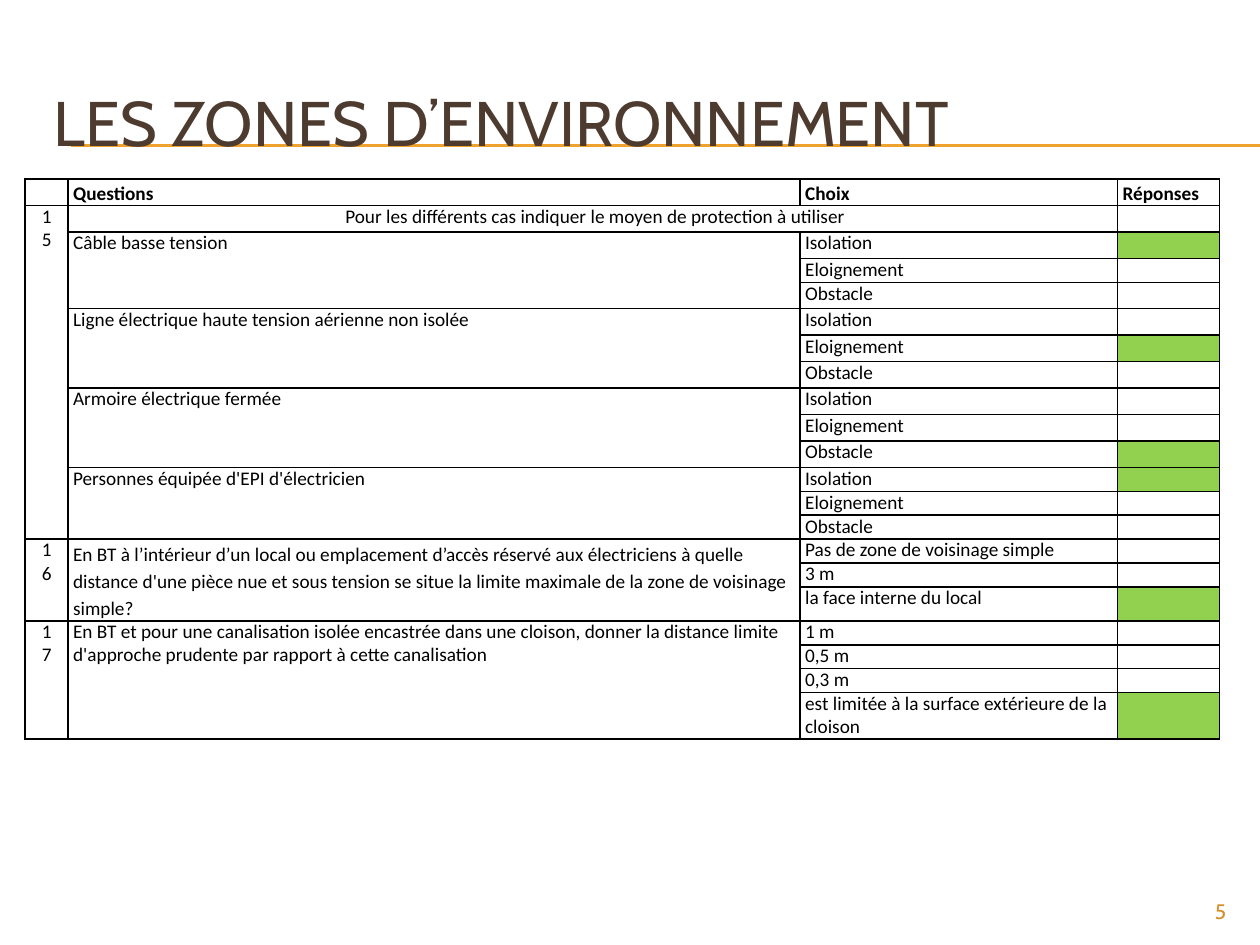
from lxml.etree import SubElement
from pptx import Presentation
from pptx.dml.color import RGBColor
from pptx.enum.text import MSO_ANCHOR, PP_ALIGN
from pptx.oxml.ns import qn
from pptx.util import Inches, Pt

BROWN = RGBColor(0x4E, 0x3B, 0x30)
AMBER = RGBColor(0xF0, 0xA2, 0x2E)
OCHRE = RGBColor(0xD4, 0x8F, 0x29)
GREEN = RGBColor(0x92, 0xD0, 0x50)
BLACK = RGBColor(0, 0, 0)
WHITE = RGBColor(0xFF, 0xFF, 0xFF)

# Content: number, instruction, then (question, choices, index of the right answer)
TITLE = "LES ZONES D’ENVIRONNEMENT"
HEADER = ["", "Questions", "Choix", "Réponses"]
MEANS = ["Isolation", "Eloignement", "Obstacle"]
BLOCKS = [
    ("15", "Pour les différents cas indiquer le moyen de protection à utiliser", [
        ("Câble basse tension", MEANS, 0),
        ("Ligne électrique haute tension aérienne non isolée", MEANS, 1),
        ("Armoire électrique fermée", MEANS, 2),
        ("Personnes équipée d'EPI d'électricien", MEANS, 0)]),
    ("16", None, [
        ("En BT à l’intérieur d’un local ou emplacement d’accès réservé aux électriciens à "
         "quelle distance d'une pièce nue et sous tension se situe la limite maximale de "
         "la zone de voisinage simple?",
         ["Pas de zone de voisinage simple", "3 m", "la face interne du local"], 2)]),
    ("17", None, [
        ("En BT et pour une canalisation isolée encastrée dans une cloison, donner la "
         "distance limite d'approche prudente par rapport à cette canalisation",
         ["1 m", "0,5 m", "0,3 m",
          "est limitée à la surface extérieure de la cloison"], 3)]),
]
COLS = [0.34, 5.81, 2.52, 0.81]
ROWS = [0.21] * 3 + [0.19] + [0.21] * 7 + [0.19] * 5 + [0.27] + [0.19] * 3 + [0.37]
EXACT = Pt(13.2)
LOOSE = 1.15


def style_run(p, size, font, color, bold=False):
    for r in p.runs:
        r.font.size, r.font.name, r.font.bold = Pt(size), font, bold
        r.font.color.rgb = color


def add_text(s, box, text, size, color, align=None, anchor=MSO_ANCHOR.TOP):
    tf = s.shapes.add_textbox(*map(Inches, box)).text_frame
    tf.word_wrap = True
    tf.vertical_anchor = anchor
    tf.text = text
    p = tf.paragraphs[0]
    p.alignment = align
    style_run(p, size, "Cabin", color)


def fill_cell(cell, text, spacing=EXACT, left=0.04, right=0, align=None, bold=False):
    cell.text_frame.text = text
    p = cell.text_frame.paragraphs[0]
    p.alignment, p.line_spacing = align, spacing
    pPr = p._p.get_or_add_pPr()
    pPr.set("marL", str(Inches(left)))
    pPr.set("marR", str(Inches(right)))
    style_run(p, 11, "Calibri", BLACK, bold)


def prepare_cell(cell):
    """Thin black borders, no insets, white fill, small empty paragraph."""
    cell.margin_left = cell.margin_right = cell.margin_top = cell.margin_bottom = 0
    tcPr = cell._tc.get_or_add_tcPr()
    for side in ("lnL", "lnR", "lnT", "lnB"):
        ln = SubElement(tcPr, qn("a:" + side), w=str(Pt(1)))
        SubElement(SubElement(ln, qn("a:solidFill")), qn("a:srgbClr"), val=str(BLACK))
    cell.fill.solid()
    cell.fill.fore_color.rgb = WHITE
    SubElement(cell.text_frame.paragraphs[0]._p, qn("a:endParaRPr"), sz="1100")


prs = Presentation()
prs.slide_width, prs.slide_height = Inches(10), Inches(7.5)
s = prs.slides.add_slide(prs.slide_layouts[6])

# Double rule under the title
for y in (1.15, 1.16):
    rule = s.shapes.add_connector(1, Inches(0.56), Inches(y), prs.slide_width, Inches(y))
    rule.line.color.rgb = AMBER
    rule.line.width = Pt(0.75)
    SubElement(rule._element.spPr, qn("a:effectLst"))

# Title and slide number
add_text(s, (0.33, 0.5, 9.5, 0.92), TITLE, 36, BROWN, anchor=MSO_ANCHOR.MIDDLE)
add_text(s, (9, 7.08, 0.83, 0.27), "5", 12, OCHRE, PP_ALIGN.RIGHT)

# Table grid
table = s.shapes.add_table(len(ROWS), len(COLS), Inches(0.2), Inches(1.42),
                           Inches(sum(COLS)), Inches(sum(ROWS))).table
table.first_row = table.horz_banding = False
for col, w in zip(table.columns, COLS):
    col.width = Inches(w)
for row, h in zip(table.rows, ROWS):
    row.height = Inches(h)
for cell in table.iter_cells():
    prepare_cell(cell)

# Header row
for c, text in enumerate(HEADER):
    if text:
        fill_cell(table.cell(0, c), text, LOOSE, bold=True)
        table.cell(0, c).text_frame.paragraphs[0].space_before = Pt(1.4)

# Question blocks
row = 1
for number, instruction, questions in BLOCKS:
    first = row
    if instruction:
        table.cell(row, 1).merge(table.cell(row, 2))
        fill_cell(table.cell(row, 1), instruction, align=PP_ALIGN.CENTER)
        row += 1
    for question, choices, answer in questions:
        table.cell(row, 1).merge(table.cell(row + len(choices) - 1, 1))
        fill_cell(table.cell(row, 1), question, LOOSE if number == "16" else EXACT)
        table.cell(row + answer, 3).fill.fore_color.rgb = GREEN
        for choice in choices:
            fill_cell(table.cell(row, 2), choice)
            row += 1
    table.cell(first, 0).merge(table.cell(row - 1, 0))
    fill_cell(table.cell(first, 0), number, left=0.16, right=0.16, align=PP_ALIGN.CENTER)

prs.save("out.pptx")
